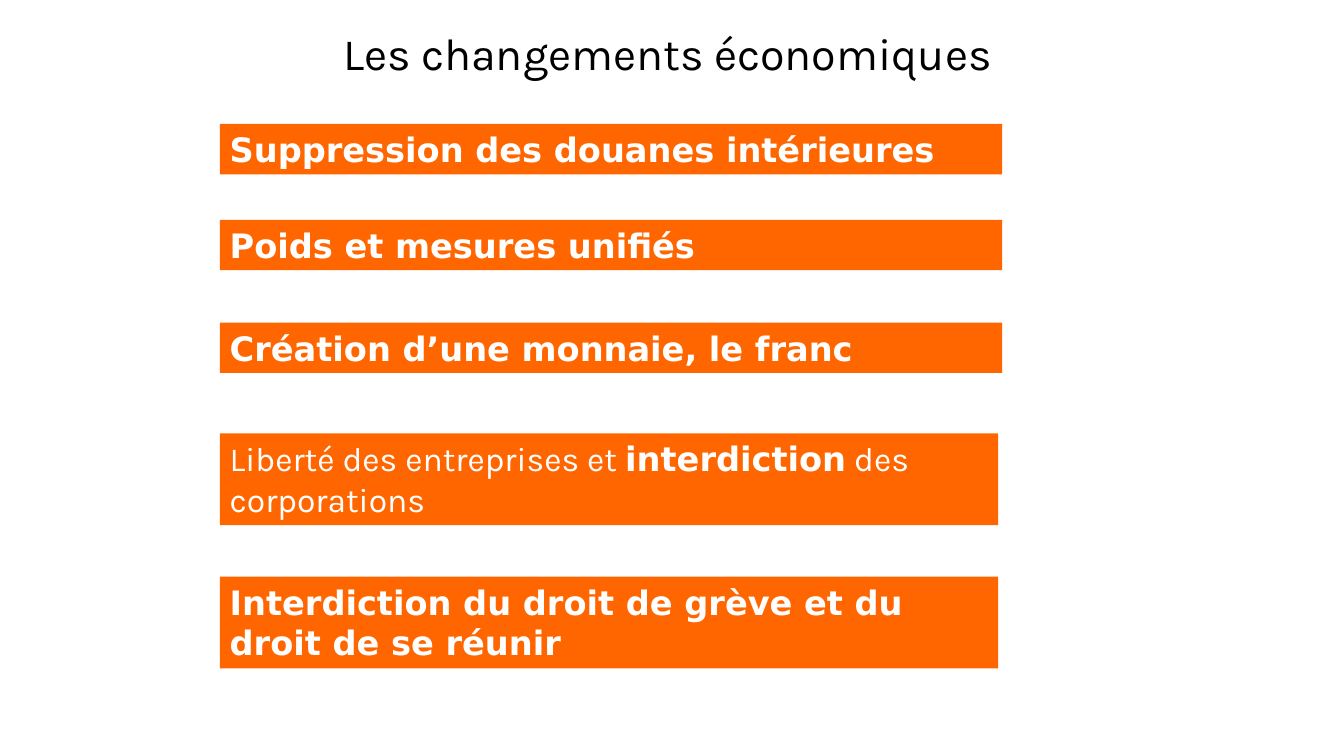
from dataclasses import dataclass

from pptx import Presentation
from pptx.dml.color import RGBColor
from pptx.enum.shapes import MSO_SHAPE
from pptx.enum.text import MSO_ANCHOR, MSO_AUTO_SIZE, PP_ALIGN
from pptx.util import Inches, Length, Pt

SLIDE_W, SLIDE_H = Inches(13.33), Inches(7.5)
BAR_LEFT = 16.35
WIDE, NARROW = 58.21, 57.91
ONE_LINE, TWO_LINES = 6.67, 12.13
ORANGE, WHITE, BLACK = "FF6600", "FFFFFF", "000000"
PLAIN, STRONG = "Karla", "DejaVu Sans"


@dataclass(frozen=True)
class Span:
    text: str
    bold: bool = True


@dataclass(frozen=True)
class Bar:
    top: float
    width: float
    height: float
    spans: tuple[Span, ...]


BARS = (
    Bar(16.4, WIDE, ONE_LINE, (Span("Suppression des douanes intérieures"),)),
    Bar(29.07, WIDE, ONE_LINE, (Span("Poids et mesures unifiés"),)),
    Bar(42.67, WIDE, ONE_LINE, (Span("Création d’une monnaie, le franc"),)),
    Bar(57.33, NARROW, TWO_LINES, (
        Span("Liberté des entreprises et ", bold=False),
        Span("interdiction"),
        Span(" des corporations", bold=False),
    )),
    Bar(76.27, NARROW, TWO_LINES, (
        Span("Interdiction du droit de grève et du droit de se réunir"),
    )),
)


def color(value: str) -> RGBColor:
    return RGBColor.from_string(value)


def across(percent: float) -> Length:
    return Length(round(SLIDE_W * percent / 100))


def down(percent: float) -> Length:
    return Length(round(SLIDE_H * percent / 100))


def add_title(s, text: str) -> None:
    sp = s.shapes.title
    sp.left, sp.top = across(13.95), down(2.8)
    sp.width, sp.height = across(71.49), down(8.4)
    tf = sp.text_frame
    tf.text = text
    tf.auto_size = MSO_AUTO_SIZE.SHAPE_TO_FIT_TEXT
    tf.vertical_anchor = MSO_ANCHOR.TOP
    p = tf.paragraphs[0]
    p.alignment = PP_ALIGN.CENTER
    p.font.name, p.font.size = PLAIN, Pt(32)
    p.font.color.rgb = color(BLACK)


def add_bar(s, bar: Bar) -> None:
    sp = s.shapes.add_shape(
        MSO_SHAPE.RECTANGLE, across(BAR_LEFT), down(bar.top),
        across(bar.width), down(bar.height),
    )
    sp.shadow.inherit = False
    sp.fill.solid()
    sp.fill.fore_color.rgb = color(ORANGE)
    sp.line.fill.background()
    tf = sp.text_frame
    tf.word_wrap = True
    tf.auto_size = MSO_AUTO_SIZE.SHAPE_TO_FIT_TEXT
    tf.vertical_anchor = MSO_ANCHOR.TOP
    p = tf.paragraphs[0]
    p.alignment = PP_ALIGN.LEFT
    p.font.size = Pt(24)
    p.font.color.rgb = color(WHITE)
    for span in bar.spans:
        r = p.add_run()
        r.text = span.text
        r.font.size = Pt(24)
        r.font.color.rgb = color(WHITE)
        r.font.bold = span.bold
        r.font.name = STRONG if span.bold else PLAIN


def main() -> None:
    prs = Presentation()
    prs.slide_width, prs.slide_height = SLIDE_W, SLIDE_H
    s = prs.slides.add_slide(prs.slide_layouts[5])
    s.background.fill.solid()
    s.background.fill.fore_color.rgb = color(WHITE)
    add_title(s, "Les changements économiques")
    for bar in BARS:
        add_bar(s, bar)
    prs.save("out.pptx")


if __name__ == "__main__":
    main()
